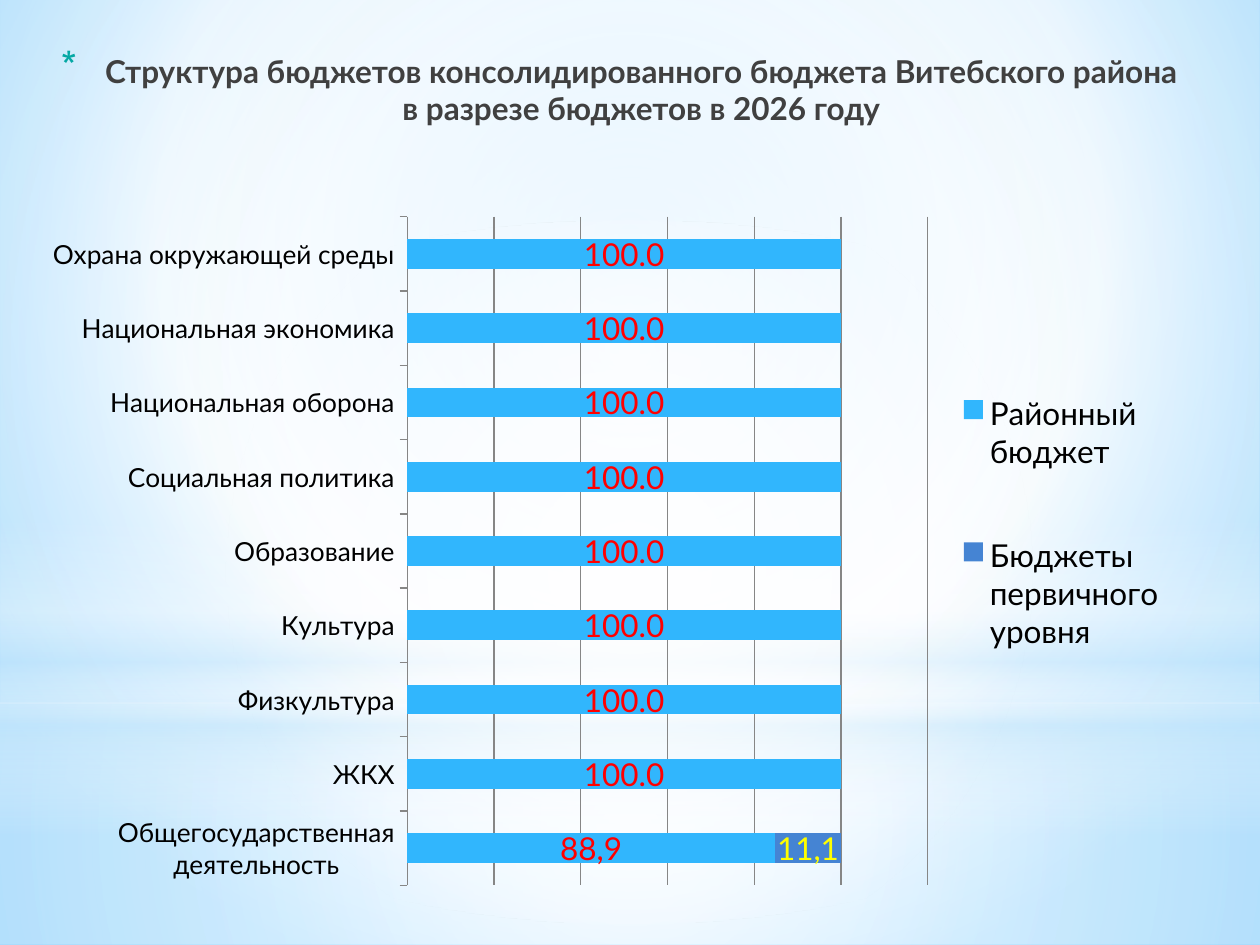
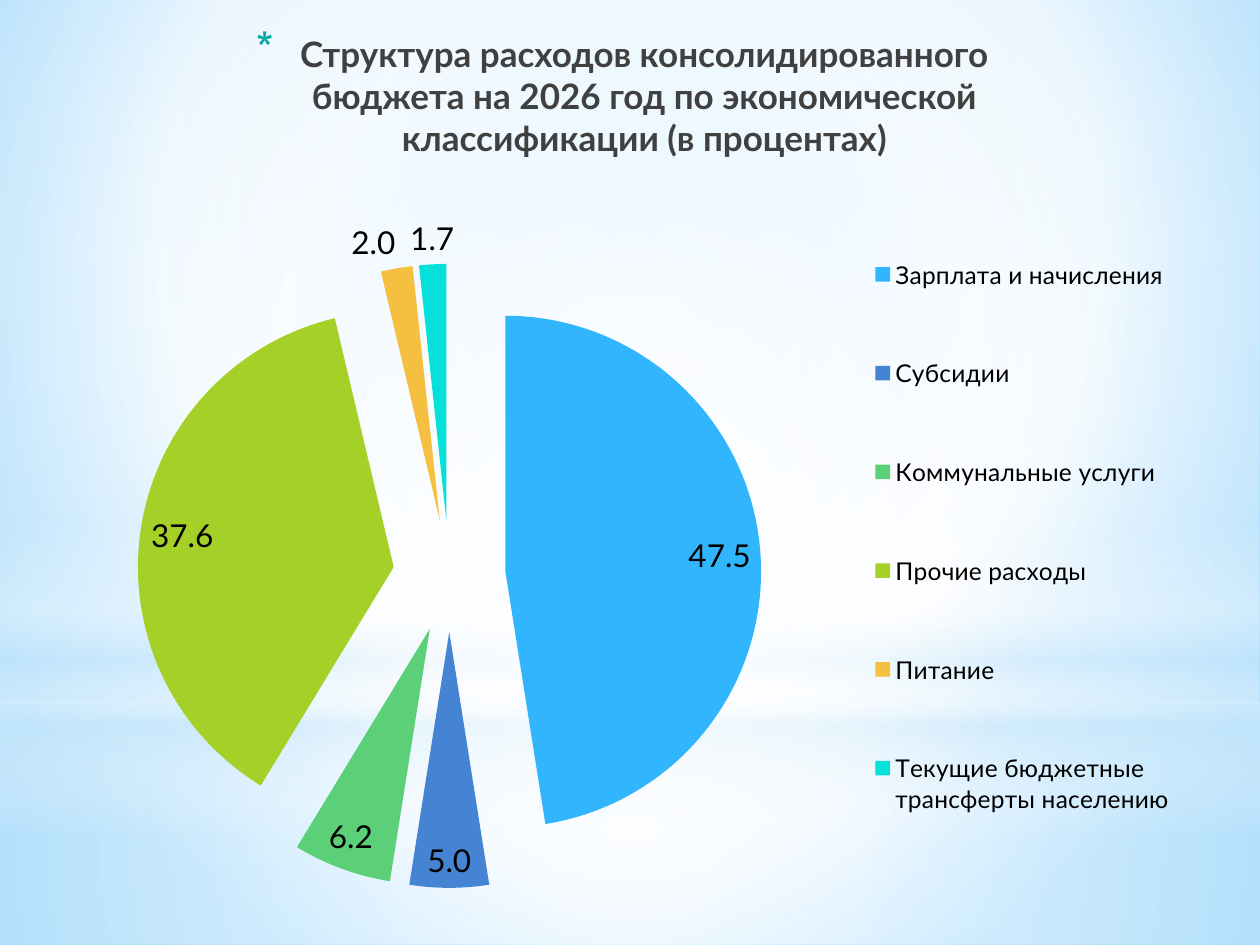
import pptx
import pptx.util
import pptx.chart.data
import pptx.dml.color
import pptx.enum.chart
import pptx.enum.shapes
import pptx.enum.text
import pptx.oxml
import pptx.oxml.ns

RGB = pptx.dml.color.RGBColor
Pt = pptx.util.Pt
qn = pptx.oxml.ns.qn

WIDE, HIGH = pptx.util.Inches(10), pptx.util.Inches(7.5)
FONT = "Lato"
WHITE = RGB(0xFF, 0xFF, 0xFF)
BLACK = RGB(0, 0, 0)
HAZE = RGB(0xC6, 0xE7, 0xFC)
PALE = RGB(0xB0, 0xE0, 0xFF)
EDGE = RGB(0x6B, 0xC5, 0xFF)
DARK = RGB(0x40, 0x40, 0x40)
NAVY = RGB(0x07, 0x3E, 0x87)
TEAL = RGB(0x04, 0xA8, 0xA4)
GREY = RGB(0x86, 0x86, 0x86)
RED = RGB(0xFF, 0, 0)
YELLOW = RGB(0xFF, 0xFF, 0)
SKY = RGB(0x31, 0xB6, 0xFD)
BLUE = RGB(0x45, 0x84, 0xD3)
GREEN = RGB(0x5B, 0xD0, 0x78)
LIME = RGB(0xA5, 0xD0, 0x28)
AMBER = RGB(0xF5, 0xC0, 0x40)
AQUA = RGB(0x05, 0xE0, 0xDB)

CENTRE = (50, 50, 50, 50)
SHAPES = pptx.enum.shapes.MSO_SHAPE

# Each layer: preset, box as shares of the slide, stops (place, colour, opacity), focus
LAYERS = [
    (SHAPES.RECTANGLE, (0, 0.744, 1, 0.256),
     [(0, WHITE, 91), (37, WHITE, 76), (100, HAZE, 79)], CENTRE),
    (SHAPES.RECTANGLE, (0, 0, 1, 0.744),
     [(0, WHITE, 89), (48, WHITE, 62), (100, HAZE, 79)], CENTRE),
    (SHAPES.RECTANGLE, (0, 0.55, 1, 0.333),
     [(0, WHITE, 0), (29, WHITE, 30), (45, HAZE, 40),
      (55, WHITE, 26), (65, HAZE, 60), (100, WHITE, 0)], None),
    (SHAPES.OVAL, (0, 0.233, 1, 0.744),
     [(0, WHITE, 100), (56, WHITE, 0)], CENTRE),
]


def place(box):
    """Turn shares of the slide into lengths."""
    return [int(share * side) for share, side in zip(box, (WIDE, HIGH, WIDE, HIGH))]


def node(xml):
    head, tail = xml.split(">", 1)
    slash = "/" if head.endswith("/") else ""
    spaces = pptx.oxml.ns.nsdecls("a", "c")
    return pptx.oxml.parse_xml(f"{head.rstrip('/')} {spaces}{slash}>{tail}")


def blend(fill, root, stops, focus=None):
    """Give the fill a gradient: round about the focus, or else downwards."""
    fill.solid()
    marks = "".join(
        f'<a:gs pos="{pos * 1000}"><a:srgbClr val="{color}">'
        f'<a:alpha val="{alpha * 1000}"/></a:srgbClr></a:gs>'
        for pos, color, alpha in stops)
    if focus:
        left, top, right, low = (side * 1000 for side in focus)
        way = (f'<a:path path="circle"><a:fillToRect l="{left}" t="{top}" '
               f'r="{right}" b="{low}"/></a:path>')
    else:
        way = '<a:lin ang="5400000" scaled="0"/>'
    old = next(root.iter(qn("a:solidFill")))
    old.getparent().replace(
        old, node(f'<a:gradFill rotWithShape="1"><a:gsLst>{marks}</a:gsLst>{way}</a:gradFill>'))


def dress(master, slide):
    """Set the shared backdrop; layers are drawn on the slide, then moved to the master."""
    blend(master.background.fill, master.element,
          [(0, PALE, 100), (60, WHITE, 100), (100, EDGE, 100)], (20, 10, 20, 60))
    for rank, (kind, box, stops, focus) in enumerate(LAYERS):
        layer = slide.shapes.add_shape(kind, *place(box))
        layer.shadow.inherit = False
        layer.line.fill.background()
        blend(layer.fill, layer.element, stops, focus)
        layer.element.nvSpPr.cNvPr.set("id", str(100 + rank))
        master.shapes.element.insert(2 + rank, layer.element)


def head(slide, text, box, size):
    title = slide.shapes.title
    title.left, title.top, title.width, title.height = place(box)
    frame = title.text_frame
    frame.word_wrap = True
    frame.auto_size = pptx.enum.text.MSO_AUTO_SIZE.NONE
    frame.vertical_anchor = pptx.enum.text.MSO_ANCHOR.TOP
    para = frame.paragraphs[0]
    para.alignment = pptx.enum.text.PP_ALIGN.CENTER
    props = para._p.get_or_add_pPr()
    props.set("marL", "320040")
    props.set("indent", "-320040")
    for xml in (f'<a:buClr><a:srgbClr val="{TEAL}"/></a:buClr>',
                '<a:buSzPct val="128000"/>', '<a:buChar char="*"/>'):
        props.append(node(xml))
    run = para.add_run()
    run.text = text
    run.font.name, run.font.size, run.font.bold = FONT, Pt(size), True
    blend(run.font.fill, title.element,
          [(0, BLACK, 100), (40, DARK, 100), (100, NAVY, 65)])


def style(font, size, color=BLACK):
    font.name, font.size = FONT, Pt(size)
    font.color.rgb = color


def layout(box, inner=False):
    """Build a manual layout from shares of the chart."""
    target = '<c:layoutTarget val="inner"/>' if inner else ""
    modes = '<c:xMode val="edge"/><c:yMode val="edge"/>'
    sides = "".join(f'<c:{key} val="{val}"/>' for key, val in zip("xywh", box))
    return node(f"<c:layout><c:manualLayout>{target}{modes}{sides}</c:manualLayout></c:layout>")


def graph(slide, kind, cats, rows, box, plot, key, size):
    """Add a chart whose plot and legend (key) sit at shares of its box."""
    data = pptx.chart.data.CategoryChartData(number_format="0.0")
    data.categories = cats
    for name, vals in rows:
        data.add_series(name, vals)
    chart = slide.shapes.add_chart(kind, *place(box), data).chart
    chart.has_title = False
    style(chart.font, 18)
    chart.has_legend = True
    legend = chart.legend
    legend.position = pptx.enum.chart.XL_LEGEND_POSITION.RIGHT
    legend.include_in_layout = False
    style(legend.font, size)
    area = next(chart.element.iter(qn("c:plotArea")))
    for part in (area, legend._element):
        for old in part.findall(qn("c:layout")):
            part.remove(old)
    area.insert(0, layout(plot, True))
    legend._element.find(qn("c:legendPos")).addnext(layout(key))
    return chart


def tag(series, color):
    labels = series.data_labels
    labels.show_value = True
    labels.number_format, labels.number_format_is_linked = "0.0", False
    style(labels.font, 18, color)
    return labels


def bars(slide):
    cats = ["Общегосударственная деятельность", "ЖКХ", "Физкультура", "Культура",
            "Образование", "Социальная политика", "Национальная оборона",
            "Национальная экономика", "Охрана окружающей среды"]
    rest = len(cats) - 1
    rows = [("Районный бюджет", [84.8] + [100] * rest),
            ("Бюджеты первичного уровня", [15.2] + [None] * rest)]
    chart = graph(slide, pptx.enum.chart.XL_CHART_TYPE.BAR_STACKED, cats, rows,
                  (0.028, 0.207, 0.937, 0.748), (0.315, 0.03, 0.441, 0.946),
                  (0.764, 0.187, 0.21, 0.55), 18)
    plot = chart.plots[0]
    plot.vary_by_categories = False
    plot.gap_width, plot.overlap = 150, 100
    looks = [(SKY, RED, "88,9"), (BLUE, YELLOW, "11,1")]
    for series, (color, ink, text) in zip(plot.series, looks):
        series.format.fill.solid()
        series.format.fill.fore_color.rgb = color
        tag(series, ink)
        run = series.points[0].data_label.text_frame.paragraphs[0].add_run()
        run.text = text
        style(run.font, 18, ink)
    axis = chart.category_axis
    style(axis.tick_labels.font, 15)
    axis.major_tick_mark = pptx.enum.chart.XL_TICK_MARK.OUTSIDE
    axis.format.line.color.rgb = GREY
    scale = chart.value_axis
    scale.visible = False
    scale.minimum_scale, scale.maximum_scale, scale.major_unit = 0, 120, 20
    scale.has_major_gridlines = True
    scale.major_gridlines.format.line.color.rgb = GREY


def pie(slide):
    parts = [("Зарплата и начисления", 47.5, SKY), ("Субсидии", 5, BLUE),
             ("Коммунальные услуги", 6.2, GREEN), ("Прочие расходы", 37.6, LIME),
             ("Питание", 2, AMBER), ("Текущие бюджетные трансферты населению", 1.7, AQUA)]
    cats, vals, colors = zip(*parts)
    chart = graph(slide, pptx.enum.chart.XL_CHART_TYPE.PIE, cats, [("Series 1", vals)],
                  (0.035, 0.185, 0.906, 0.767), (0.01, 0.123, 0.69, 0.861),
                  (0.722, 0.022, 0.27, 0.954), 14)
    series = chart.plots[0].series[0]
    for rank, color in enumerate(colors):
        fill = series.points[rank].format.fill
        fill.solid()
        fill.fore_color.rgb = color
    first = next(chart.element.iter(qn("c:dPt")))
    first.addprevious(node('<c:explosion val="22"/>'))
    tag(series, BLACK).position = pptx.enum.chart.XL_LABEL_POSITION.BEST_FIT


def main():
    deck = pptx.Presentation()
    deck.slide_width, deck.slide_height = WIDE, HIGH
    first, second = (deck.slides.add_slide(deck.slide_layouts[5]) for _ in range(2))
    dress(deck.slide_master, first)
    head(first, "Структура бюджетов консолидированного бюджета Витебского района "
         "в разрезе бюджетов в 2026 году", (0.035, 0.048, 0.913, 0.136), 18)
    bars(first)
    head(second, "Структура расходов консолидированного бюджета на 2026 год "
         "по экономической классификации (в процентах)", (0.138, 0.028, 0.712, 0.167), 20)
    pie(second)
    deck.save("out.pptx")


if __name__ == "__main__":
    main()
